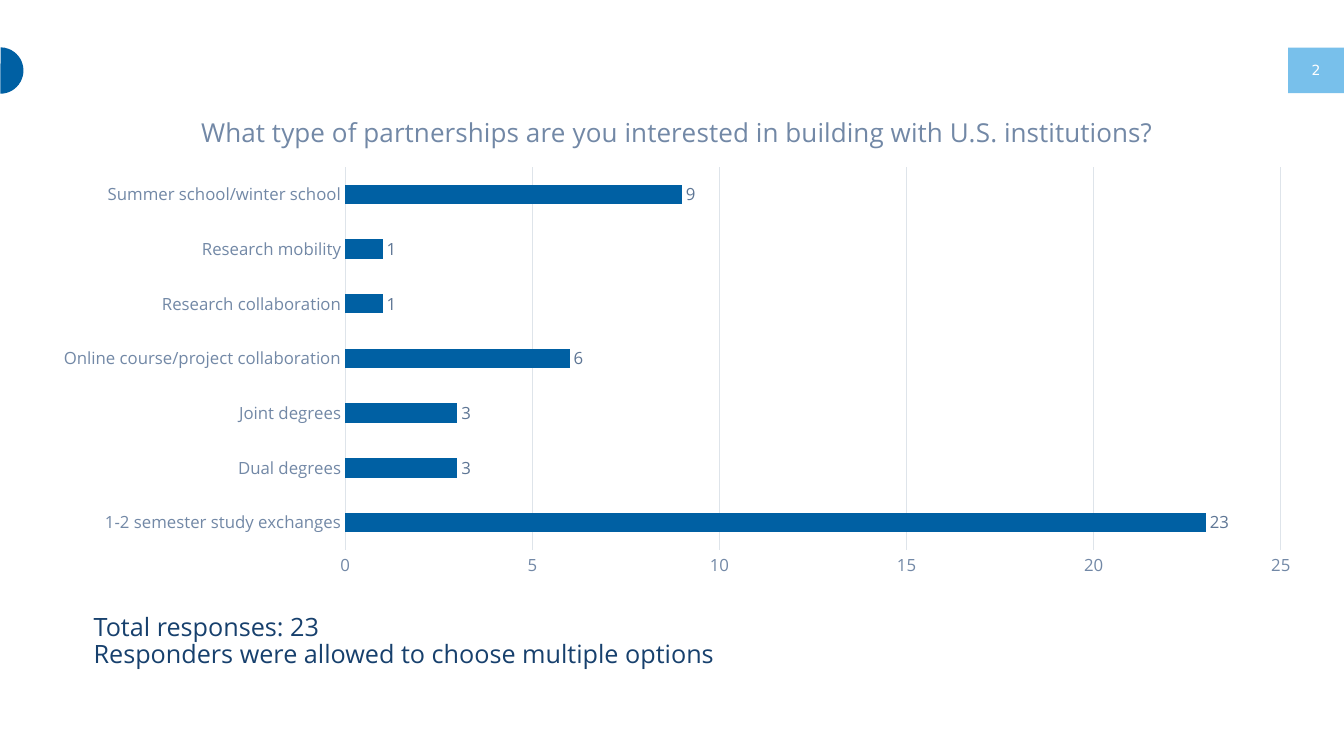
from lxml import etree
from pptx import Presentation
from pptx import util as u
from pptx.chart.data import CategoryChartData
from pptx.dml.color import RGBColor
from pptx.enum import chart as charts, shapes, text

BLUE, SKY, NAVY, WHITE = "0060A3", "78C0EB", "17406D", "FFFFFF"
SLATE, LABEL, GRID = "7288A6", "5E7695", "DEE4EA"
FONT = "Open Sans"

QUESTION = "What type of partnerships are you interested in building with U.S. institutions?"
PARTNERSHIPS = {
    "1-2 semester study exchanges": 23,
    "Dual degrees": 3,
    "Joint degrees": 3,
    "Online course/project collaboration": 6,
    "Research collaboration": 1,
    "Research mobility": 1,
    "Summer school/winter school": 9,
}
PLOT_AREA = {"x": 0.24, "y": 0.153, "w": 0.732, "h": 0.769}


def color(value):
    return RGBColor.from_string(value)


def set_font(font, size, value, name=FONT):
    font.size, font.name, font.bold = u.Pt(size), name, False
    font.color.rgb = color(value)


class SurveySlide:
    """Draws the elements of the survey slide in its shared style."""

    def __init__(self, deck):
        self.page = deck.slides.add_slide(deck.slide_layouts[6])

    def shape(self, kind, place, fill, rotation=0, adjustments=()):
        shape = self.page.shapes.add_shape(kind, *map(u.Cm, place))
        shape.shadow.inherit = False
        shape.fill.solid()
        shape.fill.fore_color.rgb = color(fill)
        shape.line.fill.background()
        shape.rotation = rotation
        for index, value in enumerate(adjustments):
            shape.adjustments[index] = value

    def text(self, place, lines, size, value, name=FONT,
             align=text.PP_ALIGN.LEFT, anchor=text.MSO_ANCHOR.TOP):
        box = self.page.shapes.add_textbox(*map(u.Cm, place))
        frame = box.text_frame
        frame.word_wrap = True
        frame.vertical_anchor = anchor
        frame.text = "\n".join(lines)
        for para in frame.paragraphs:
            para.alignment, para.line_spacing = align, 0.9
            set_font(para.font, size, value, name)

    def bar_chart(self, place, title, values):
        data = CategoryChartData()
        data.categories = list(values)
        data.add_series("Series 1", list(values.values()))
        chart = self.page.shapes.add_chart(
            charts.XL_CHART_TYPE.BAR_CLUSTERED, *map(u.Cm, place), data).chart
        set_font(chart.font, 10, "3C4B5F")
        chart.has_legend = False
        chart.has_title = True
        chart.chart_title.include_in_layout = False
        chart.chart_title.text_frame.text = title
        set_font(chart.chart_title.text_frame.paragraphs[0].font, 18.6, SLATE)
        self.style_axes(chart)
        self.style_bars(chart.plots[0])
        self.place_plot(chart)

    def style_axes(self, chart):
        for axis in (chart.category_axis, chart.value_axis):
            axis.major_tick_mark = axis.minor_tick_mark = charts.XL_TICK_MARK.NONE
            set_font(axis.tick_labels.font, 12, SLATE)
        values = chart.value_axis
        values.minimum_scale, values.maximum_scale, values.major_unit = 0, 25, 5
        values.format.line.fill.background()
        values.has_major_gridlines = True
        for line in (chart.category_axis.format.line, values.major_gridlines.format.line):
            line.color.rgb, line.width = color(GRID), u.Pt(0.75)

    def style_bars(self, plot):
        plot.gap_width = 182
        plot.vary_by_categories = False
        bars = plot.series[0]
        bars.format.fill.solid()
        bars.format.fill.fore_color.rgb = color(BLUE)
        labels = bars.data_labels
        labels.show_value = True
        labels.position = charts.XL_LABEL_POSITION.OUTSIDE_END
        set_font(labels.font, 12, LABEL)

    def place_plot(self, chart):
        area = chart.plots[0]._element.getparent()
        space = "{%s}" % area.nsmap["c"]
        for old in area.findall(space + "layout"):
            area.remove(old)
        layout = etree.Element(space + "layout")
        manual = etree.SubElement(layout, space + "manualLayout")
        settings = {"layoutTarget": "inner", "xMode": "edge", "yMode": "edge", **PLOT_AREA}
        for tag, value in settings.items():
            etree.SubElement(manual, space + tag).set("val", str(value))
        area.insert(0, layout)


def main():
    deck = Presentation()
    deck.slide_width, deck.slide_height = u.Cm(33.87), u.Cm(19.05)
    slide = SurveySlide(deck)
    slide.shape(shapes.MSO_SHAPE.RECTANGLE, (32.46, 1.2, 1.41, 1.15), SKY)
    slide.shape(shapes.MSO_SHAPE.CHORD, (-0.58, 1.19, 1.17, 1.17), BLUE,
                rotation=202, adjustments=(41.26, 148.55))
    slide.text((32.46, 1.27, 1.41, 1.02), ["2"], 10, WHITE, "DejaVu Sans",
               text.PP_ALIGN.CENTER, text.MSO_ANCHOR.MIDDLE)
    slide.text((2.11, 15.37, 16.56, 1.8),
               ["Total responses: 23", "Responders were allowed to choose multiple options"],
               18, NAVY)
    slide.bar_chart((0.97, 2.29, 32.21, 12.55), QUESTION, PARTNERSHIPS)
    deck.save("out.pptx")


if __name__ == "__main__":
    main()
